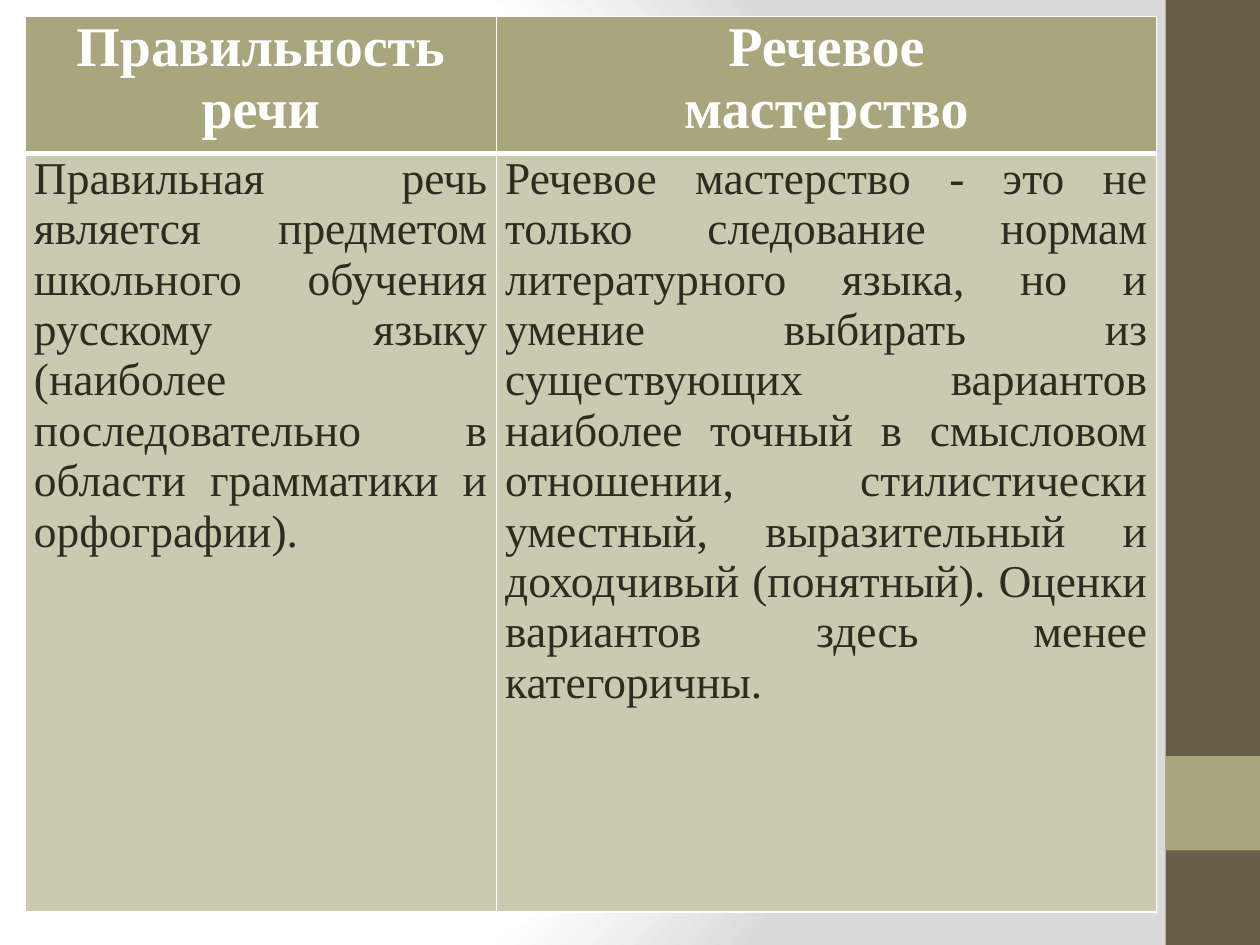
"""Build a slide comparing correct speech with speech mastery."""
from dataclasses import dataclass

from pptx import Presentation
from pptx.dml.color import RGBColor
from pptx.enum.shapes import MSO_SHAPE
from pptx.enum.text import PP_ALIGN
from pptx.oxml import parse_xml
from pptx.oxml.ns import nsdecls
from pptx.slide import Slide
from pptx.table import _Cell
from pptx.util import Inches, Pt

RECT = MSO_SHAPE.RECTANGLE
CENTER = PP_ALIGN.CENTER
JUSTIFY = PP_ALIGN.JUSTIFY
FONT = "Times New Roman"
COLORS = {
    "white": "FFFFFF",
    "gray": "DADADA",
    "brown": "675E47",
    "olive": "A9A57C",
    "sand": "CBC9B0",
    "ink": "2F2B20",
}
WIDTHS = [3.74, 5.24]
HEIGHTS = [1.09, 6.02]


@dataclass
class Band:
    top: float
    height: float
    color: str


@dataclass
class Style:
    size: int
    bold: bool
    ink: str
    fill: str
    align: PP_ALIGN
    base: int


BANDS = [Band(0, 7.5, "brown"), Band(6, 0.75, "olive")]
HEAD = Style(32, True, "white", "olive", CENTER, 3)
BODY = Style(26, False, "ink", "sand", JUSTIFY, 1)
ROWS = [
    (HEAD, ["Правильность речи", "Речевое\nмастерство"]),
    (BODY, [
        "Правильная речь является предметом школьного обучения русскому "
        "языку (наиболее последовательно в области грамматики и орфографии).",
        "Речевое мастерство - это не только следование нормам литературного "
        "языка, но и умение выбирать из существующих вариантов наиболее "
        "точный в смысловом отношении, стилистически уместный, выразительный "
        "и доходчивый (понятный). Оценки вариантов здесь менее категоричны.",
    ]),
]


def rgb(name: str) -> RGBColor:
    return RGBColor.from_string(COLORS[name])


def paint_back(slide: Slide) -> None:
    stops = "".join(
        f'<a:gs pos="{pos * 1000}"><a:srgbClr val="{COLORS[name]}"/></a:gs>'
        for pos, name in [(0, "white"), (75, "white"), (100, "gray")]
    )
    slide.element.cSld.insert(0, parse_xml(
        f'<p:bg {nsdecls("p", "a")}><p:bgPr><a:gradFill rotWithShape="1">'
        f'<a:gsLst>{stops}</a:gsLst><a:path path="circle">'
        '<a:fillToRect l="20000" t="50000" r="100000" b="50000"/></a:path>'
        '</a:gradFill><a:effectLst/></p:bgPr></p:bg>'
    ))


def draw_band(slide: Slide, band: Band) -> None:
    shape = slide.shapes.add_shape(
        RECT, Inches(9.25), Inches(band.top), Inches(0.75), Inches(band.height)
    )
    shape.shadow.inherit = False
    shape.fill.solid()
    shape.fill.fore_color.rgb = rgb(band.color)
    shape.line.fill.background()


def fill_cell(cell: _Cell, text: str, style: Style) -> None:
    cell.margin_left = cell.margin_right = Inches(0.07)
    cell.margin_top = cell.margin_bottom = 0
    props = cell._tc.get_or_add_tcPr()
    for side, width in [("L", 1), ("R", 1), ("T", 1), ("B", style.base)]:
        props.append(parse_xml(
            f'<a:ln{side} {nsdecls("a")} w="{Pt(width)}"><a:solidFill>'
            f'<a:srgbClr val="{COLORS["white"]}"/></a:solidFill></a:ln{side}>'
        ))
    cell.fill.solid()
    cell.fill.fore_color.rgb = rgb(style.fill)
    cell.text_frame.text = text
    for para in cell.text_frame.paragraphs:
        para.alignment = style.align
        for run in para.runs:
            font = run.font
            font.name, font.size, font.bold = FONT, Pt(style.size), style.bold
            font.color.rgb = rgb(style.ink)


def draw_table(slide: Slide) -> None:
    table = slide.shapes.add_table(
        len(HEIGHTS), len(WIDTHS), Inches(0.2), Inches(0.13),
        Inches(sum(WIDTHS)), Inches(sum(HEIGHTS)),
    ).table
    for col, width in zip(table.columns, WIDTHS):
        col.width = Inches(width)
    for row, height, (style, texts) in zip(table.rows, HEIGHTS, ROWS):
        row.height = Inches(height)
        for cell, text in zip(row.cells, texts):
            fill_cell(cell, text, style)
    for cell in table.rows[1].cells:
        top = cell._tc.tcPr.find(
            "{http://schemas.openxmlformats.org/drawingml/2006/main}lnT"
        )
        top.set("w", str(Pt(HEAD.base)))


def main() -> None:
    deck = Presentation()
    deck.slide_width, deck.slide_height = Inches(10), Inches(7.5)
    slide = deck.slides.add_slide(deck.slide_layouts[6])
    paint_back(slide)
    for band in BANDS:
        draw_band(slide, band)
    draw_table(slide)
    deck.save("out.pptx")


if __name__ == "__main__":
    main()
